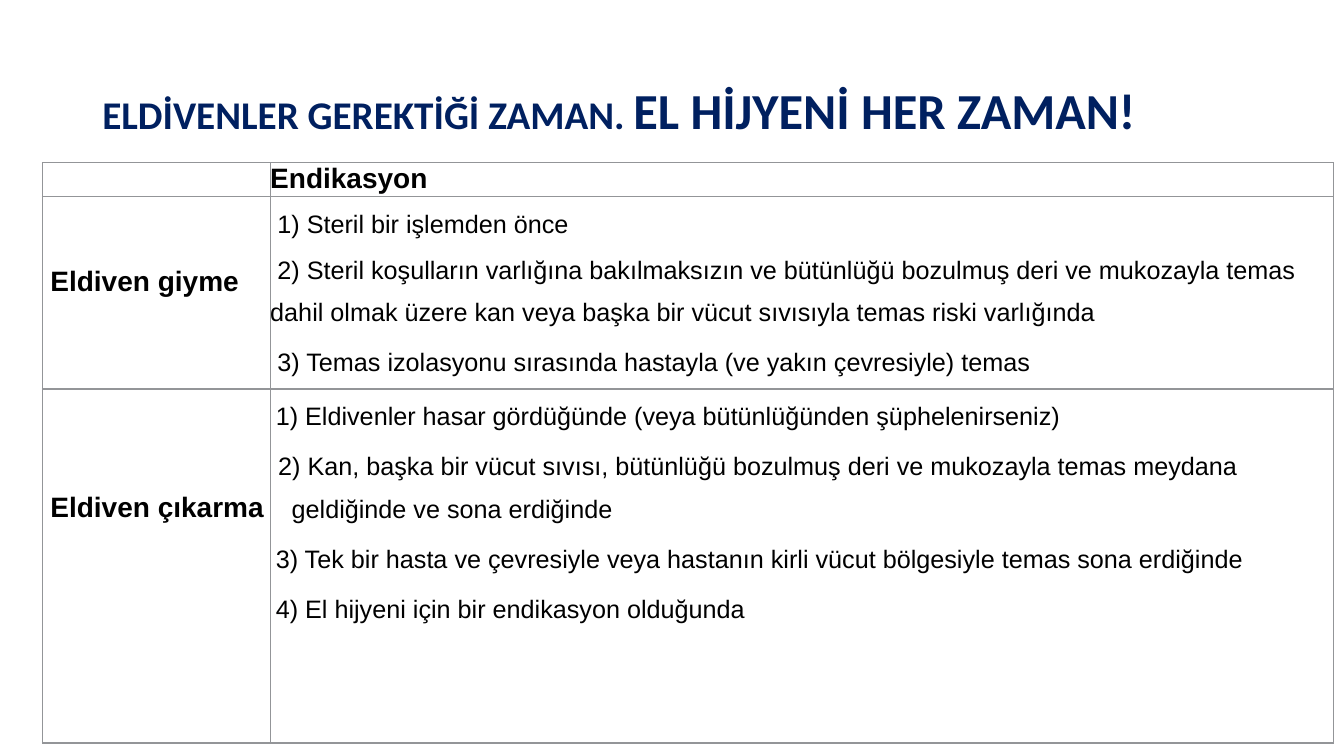
from lxml.etree import SubElement
from pptx import Presentation
from pptx.dml.color import RGBColor
from pptx.enum.text import MSO_ANCHOR as Anchor
from pptx.oxml.ns import qn
from pptx.util import Cm, Pt


def paint(obj, hue):
    obj.color.rgb = RGBColor.from_string(hue)


def style(par, size, bold=False, before=0, left=0, first=0):
    par.font.name = "Arial"
    par.font.size = Pt(size)
    par.font.bold = bold
    paint(par.font, "000000")
    par.space_before = Pt(before)
    props = par._p.get_or_add_pPr()
    props.set("marL", str(Cm(left)))
    props.set("indent", str(Cm(first)))


prs = Presentation()
prs.slide_width, prs.slide_height = Cm(33.87), Cm(19.05)
slide = prs.slides.add_slide(prs.slide_layouts[6])

# Title
box = slide.shapes.add_textbox(Cm(2.33), Cm(1.01), Cm(29.21), Cm(3.68))
frame = box.text_frame
frame.word_wrap = True
frame.vertical_anchor = Anchor.MIDDLE
title = frame.paragraphs[0]
title.line_spacing = 0.9
title.font.name = "Calibri"
title.font.bold = True
paint(title.font, "002060")
for text, size in (("ELDİVENLER GEREKTİĞİ ZAMAN. ", 28),
                   ("EL HİJYENİ HER ZAMAN!", 36)):
    run = title.add_run()
    run.text = text
    run.font.size = Pt(size)

# Table grid
shape = slide.shapes.add_table(3, 2, Cm(1.07), Cm(4.1), Cm(32.54), Cm(14.45))
table = shape.table
table.first_row = table.horz_banding = False
for col, width in zip(table.columns, (5.74, 26.8)):
    col.width = Cm(width)
for row, height in zip(table.rows, (0.78, 4.75, 8.92)):
    row.height = Cm(height)
for cell in table.iter_cells():
    cell.margin_left = cell.margin_right = 0
    cell.margin_top = cell.margin_bottom = 0
    props = cell._tc.get_or_add_tcPr()
    for side in ("a:lnL", "a:lnR", "a:lnT", "a:lnB"):
        line = SubElement(props, qn(side), w=str(Pt(1)))
        fill = SubElement(line, qn("a:solidFill"))
        SubElement(fill, qn("a:srgbClr"), val="939598")
    cell.fill.background()

# Header row
style(table.cell(0, 0).text_frame.paragraphs[0], 18)
head = table.cell(0, 1).text_frame.paragraphs[0]
head.text = "Endikasyon"
style(head, 20, bold=True)

# Row labels
for row, text, top in ((1, "Eldiven giyme", 1.75), (2, "Eldiven çıkarma", 2.6)):
    cell = table.cell(row, 0)
    cell.margin_left, cell.margin_top = Cm(0.2), Cm(top)
    label = cell.text_frame.paragraphs[0]
    label.text = text
    style(label, 20, bold=True)

# Indications: text, space before, left margin, first-line indent
wear = [
    ("1) Steril bir işlemden önce", 2.5, 0, 0.18),
    ("2) Steril koşulların varlığına bakılmaksızın ve bütünlüğü bozulmuş deri ve "
     "mukozayla temas dahil olmak üzere kan veya başka bir vücut sıvısıyla temas "
     "riski varlığında", 2.5, 0, 0.18),
    ("3) Temas izolasyonu sırasında hastayla (ve yakın çevresiyle) temas",
     5.5, 0, 0.18),
]
remove = [
    ("1) Eldivenler hasar gördüğünde (veya bütünlüğünden şüphelenirseniz)",
     5.5, 0.54, -0.4),
    ("2) Kan, başka bir vücut sıvısı, bütünlüğü bozulmuş deri ve mukozayla temas "
     "meydana geldiğinde ve sona erdiğinde", 5.5, 0.54, -0.34),
    ("3) Tek bir hasta ve çevresiyle veya hastanın kirli vücut bölgesiyle temas "
     "sona erdiğinde", 5.5, 0.54, -0.4),
    ("4) El hijyeni için bir endikasyon olduğunda", 5.5, 0.54, -0.4),
]
for row, items in enumerate((wear, remove), 1):
    frame = table.cell(row, 1).text_frame
    for num, (text, before, left, first) in enumerate(items):
        par = frame.add_paragraph() if num else frame.paragraphs[0]
        par.text = text
        par.line_spacing = 1.5
        style(par, 18, before=before, left=left, first=first)

prs.save("out.pptx")
